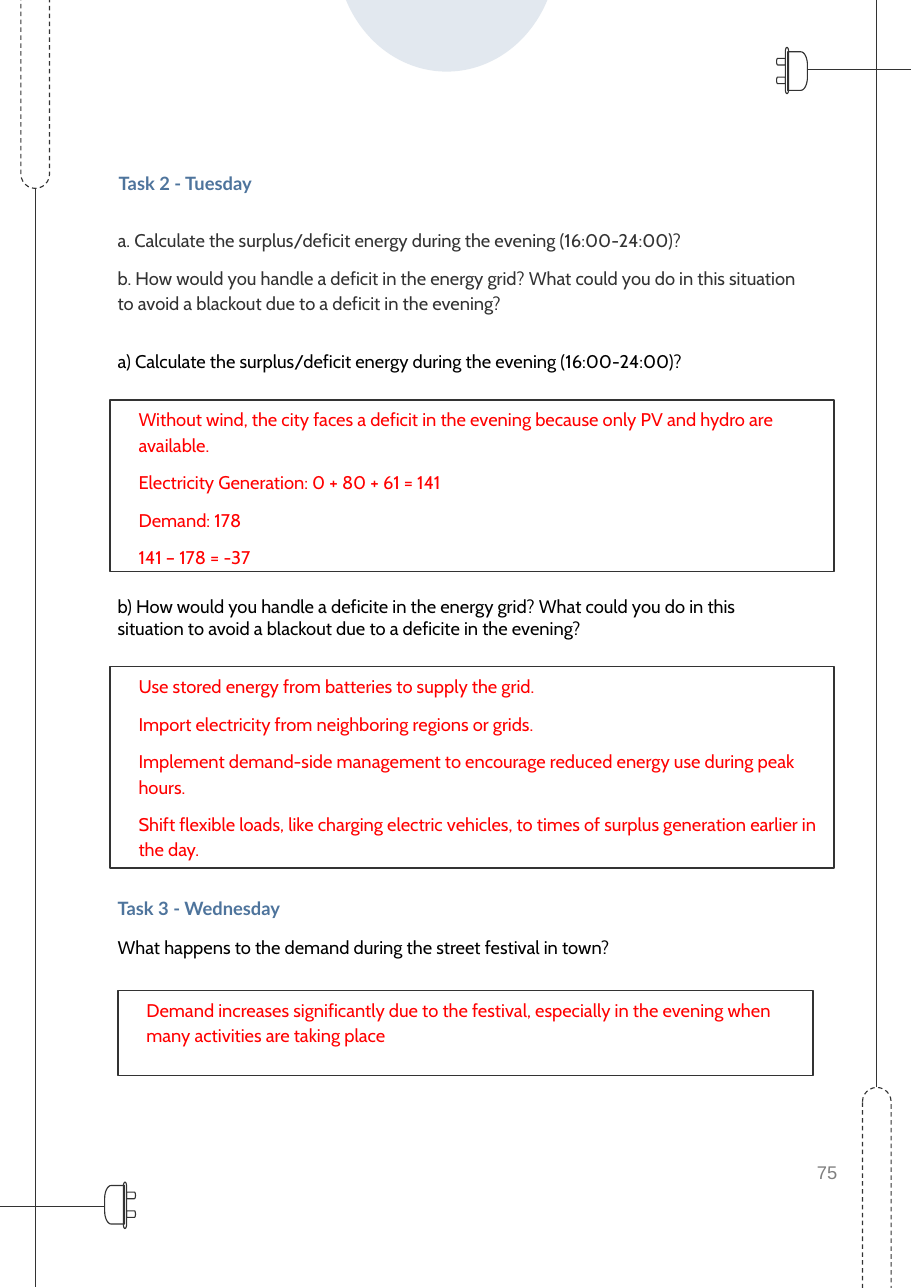
from math import cos, radians, sin

from lxml.etree import SubElement
from pptx import Presentation
from pptx.dml.color import RGBColor
from pptx.enum.dml import MSO_LINE
from pptx.enum.shapes import MSO_CONNECTOR, MSO_SHAPE
from pptx.enum.text import MSO_ANCHOR, PP_ALIGN
from pptx.oxml.ns import qn
from pptx.util import Inches, Pt

DARK = RGBColor(0x33, 0x33, 0x33)
BLACK = RGBColor(0x00, 0x00, 0x00)
RED = RGBColor(0xFF, 0x00, 0x00)
BLUE = RGBColor(0x4E, 0x74, 0x9C)
GRAY = RGBColor(0x7F, 0x7F, 0x7F)

TURN_WIDTH, TURN_HEIGHT = 8.28, 11.58
TEXT_INDENT = 0.16

WIND_ANSWERS = [
    "Without wind, the city faces a deficit in the evening because only PV and hydro are available.",
    "Electricity Generation: 0 + 80 + 61 = 141",
    "Demand: 178",
    "141 – 178 = -37",
]
DEFICIT_ANSWERS = [
    "Use stored energy from batteries to supply the grid.",
    "Import electricity from neighboring regions or grids.",
    "Implement demand-side management to encourage reduced energy use during peak hours.",
    "Shift flexible loads, like charging electric vehicles, to times of surplus generation earlier in the day.",
]
FESTIVAL_ANSWERS = [
    "Demand increases significantly due to the festival, especially in the evening when many activities are taking place",
]
TASK_QUESTIONS = [
    "a. Calculate the surplus/deficit energy during the evening (16:00-24:00)?",
    "b. How would you handle a deficit in the energy grid? What could you do in this situation "
    "to avoid a blackout due to a deficit in the evening?",
]


def turn(x, y, turned):
    """Return a point in inches, turned half round the page if asked."""
    if turned:
        x, y = TURN_WIDTH - x, TURN_HEIGHT - y
    return Inches(x), Inches(y)


def style_outline(shape, width):
    """Give a shape a plain dark outline and no fill."""
    shape.shadow.inherit = False
    shape.fill.background()
    shape.line.color.rgb = DARK
    shape.line.width = Pt(width)


def add_wire(slide, start, end, turned):
    """Draw a thin straight wire."""
    connector = slide.shapes.add_connector(
        MSO_CONNECTOR.STRAIGHT, *turn(*start, turned), *turn(*end, turned))
    connector.line.color.rgb = DARK
    connector.line.width = Pt(0.75)
    SubElement(connector._element.spPr, qn("a:effectLst"))
    return connector


def add_rounded_part(slide, left, top, right, bottom, radii, turned):
    """Draw a plug part whose left and right corners have their own radii."""
    left_radius, right_radius, vertical_radius = radii
    points = []
    for quarter in range(4):
        on_left = quarter in (1, 2)
        radius_x = left_radius if on_left else right_radius
        radius_y = vertical_radius if radius_x else 0
        center_x = left + radius_x if on_left else right - radius_x
        center_y = bottom - radius_y if quarter < 2 else top + radius_y
        for step in range(9 if radius_x else 1):
            angle = radians(90 * quarter + 11.25 * step)
            points.append(turn(center_x + radius_x * cos(angle),
                               center_y + radius_y * sin(angle), turned))
    builder = slide.shapes.build_freeform(*points[0])
    builder.add_line_segments(points[1:], close=True)
    style_outline(builder.convert_to_shape(), 0.75)


def add_plug(slide, turned):
    """Draw a plug with its cable."""
    add_rounded_part(slide, 7.15, 0.47, 7.33, 0.82, (0, 0.06, 0.12), turned)
    add_rounded_part(slide, 7.13, 0.43, 7.16, 0.85, (0.015, 0.015, 0.04), turned)
    for top in (0.53, 0.7):
        add_rounded_part(slide, 7.05, top, 7.13, top + 0.06, (0.01, 0, 0.03), turned)
    add_wire(slide, (7.33, 0.63), (8.28, 0.63), turned)


def add_socket(slide, turned):
    """Draw a dashed sleeve with the wire that leaves it."""
    width, height = 0.26, 2.67
    left, top = 7.83, 9.87
    corner = (left + width, top + height) if turned else (left, top)
    sleeve = slide.shapes.add_shape(
        MSO_SHAPE.ROUNDED_RECTANGLE, *turn(*corner, turned), Inches(width), Inches(height))
    sleeve.adjustments[0] = 0.5
    style_outline(sleeve, 0.75)
    sleeve.line.dash_style = MSO_LINE.DASH
    middle = left + width / 2
    wire = add_wire(slide, (middle, top), (middle, -0.1), turned)
    wire.begin_connect(sleeve, 2 if turned else 0)


def add_disc(slide):
    """Draw the pale disc at the top edge."""
    disc = slide.shapes.add_shape(
        MSO_SHAPE.OVAL, Inches(3.05), Inches(-1.57), Inches(2.01), Inches(2.22))
    disc.shadow.inherit = False
    disc.line.fill.background()
    disc.fill.solid()
    disc.fill.fore_color.rgb = BLUE
    color = disc._element.spPr.find(qn("a:solidFill"))[0]
    SubElement(color, qn("a:alpha"), val="16000")


def write_paragraphs(shape, texts, color, name="Cabin", bold=False, line_spacing=1.15,
                     space_after=8, align=PP_ALIGN.LEFT, indent=TEXT_INDENT):
    """Fill a shape with evenly styled paragraphs."""
    frame = shape.text_frame
    frame.word_wrap = True
    for index, text in enumerate(texts):
        paragraph = frame.add_paragraph() if index else frame.paragraphs[0]
        paragraph.text = text
        paragraph.alignment = align
        paragraph.line_spacing = line_spacing
        paragraph.space_after = Pt(space_after)
        paragraph._p.get_or_add_pPr().set("marL", str(Inches(indent)))
        paragraph.font.name = name
        paragraph.font.size = Pt(12)
        paragraph.font.bold = bold
        paragraph.font.color.rgb = color


def add_text(slide, left, top, width, height, texts, color,
             anchor=MSO_ANCHOR.TOP, margin=0.05, **style):
    """Add a text box."""
    box = slide.shapes.add_textbox(Inches(left), Inches(top), Inches(width), Inches(height))
    frame = box.text_frame
    frame.vertical_anchor = anchor
    frame.margin_top = frame.margin_bottom = Inches(margin)
    write_paragraphs(box, texts, color, **style)


def add_heading(slide, left, top, text):
    """Add a task heading."""
    add_text(slide, left, top, 2.16, 0.46, [text], BLUE, MSO_ANCHOR.MIDDLE, 0.1,
             name="Lato", bold=True, space_after=0)


def add_question(slide, top, height, text):
    """Add a question above its answer box."""
    add_text(slide, 0.81, top, 6.6, height, [text], BLACK, line_spacing=1, space_after=0)


def add_answer_box(slide, left, top, width, height, answers):
    """Add a framed box with answers in red."""
    box = slide.shapes.add_shape(
        MSO_SHAPE.RECTANGLE, Inches(left), Inches(top), Inches(width), Inches(height))
    style_outline(box, 1)
    box.text_frame.vertical_anchor = MSO_ANCHOR.TOP
    write_paragraphs(box, answers, RED)


def main():
    """Build the worksheet page and save it."""
    presentation = Presentation()
    presentation.slide_width = Inches(8.27)
    presentation.slide_height = Inches(11.69)
    slide = presentation.slides.add_slide(presentation.slide_layouts[6])

    for turned in (False, True):
        add_socket(slide, turned)
        add_plug(slide, turned)
    add_disc(slide)

    add_heading(slide, 0.82, 1.42, "Task 2 - Tuesday")
    add_text(slide, 0.81, 1.95, 6.67, 1.13, TASK_QUESTIONS, DARK, margin=0.1)
    add_question(slide, 3.13, 0.3,
                 "a) Calculate the surplus/deficit energy during the evening (16:00-24:00)?")
    add_answer_box(slide, 1, 3.63, 6.57, 1.56, WIND_ANSWERS)
    add_question(slide, 5.35, 0.5,
                 "b) How would you handle a deficite in the energy grid? What could you do in this "
                 "situation to avoid a blackout due to a deficite in the evening?")
    add_answer_box(slide, 1, 6.05, 6.57, 1.83, DEFICIT_ANSWERS)

    add_heading(slide, 0.81, 8, "Task 3 - Wednesday")
    add_question(slide, 8.45, 0.3, "What happens to the demand during the street festival in town?")
    add_answer_box(slide, 1.07, 8.99, 6.31, 0.77, FESTIVAL_ANSWERS)
    add_text(slide, 5.84, 10.33, 1.86, 0.62, ["75"], GRAY, MSO_ANCHOR.MIDDLE, name="Arial",
             line_spacing=1, space_after=0, align=PP_ALIGN.RIGHT, indent=0)

    presentation.save("out.pptx")


if __name__ == "__main__":
    main()
